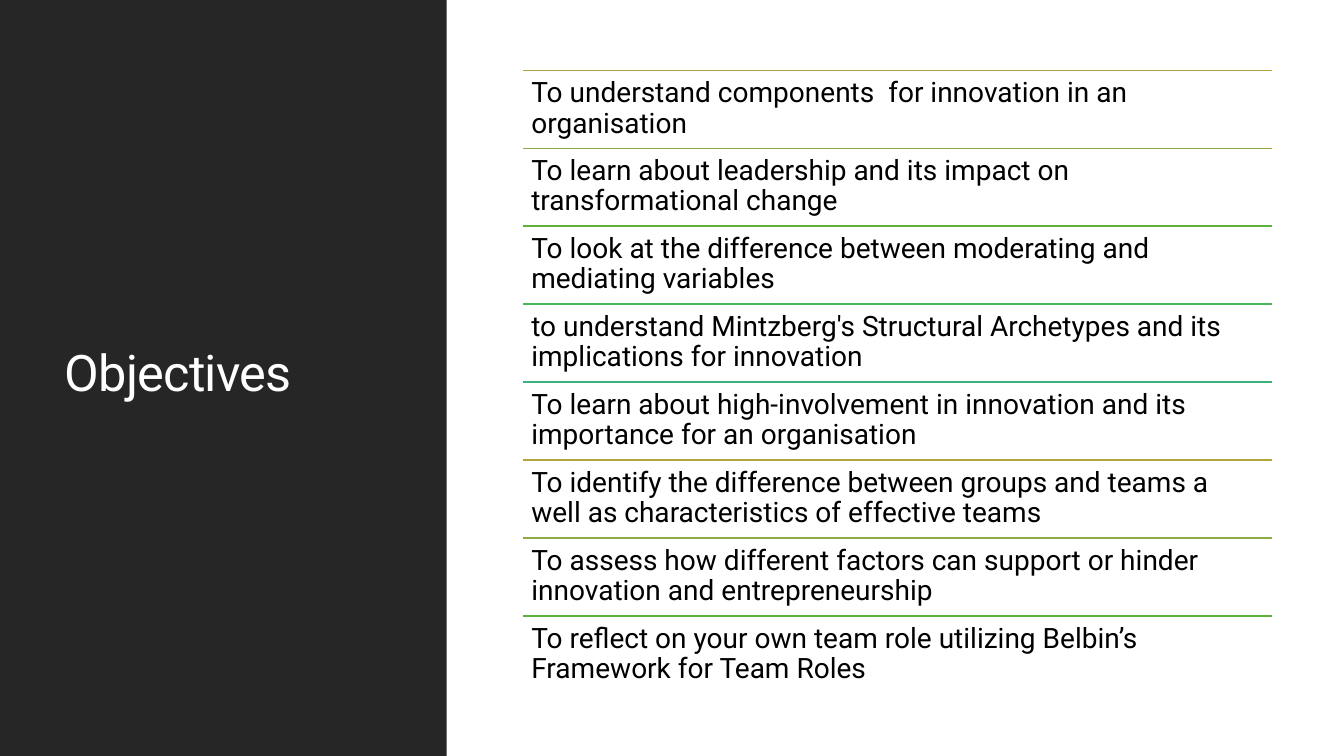
"""Build the Objectives slide: a dark title panel beside eight ruled statements."""
from itertools import cycle

from lxml.etree import SubElement
from pptx import Presentation
from pptx.dml.color import RGBColor
from pptx.enum.shapes import MSO_CONNECTOR, MSO_SHAPE
from pptx.enum.text import MSO_ANCHOR, PP_ALIGN
from pptx.oxml.ns import qn
from pptx.util import Inches, Pt


def color(value):
    return RGBColor.from_string(value)


def format_text(shape, size, text_color, anchor):
    frame = shape.text_frame
    frame.word_wrap = True
    frame.vertical_anchor = anchor
    para = frame.paragraphs[0]
    para.alignment = PP_ALIGN.LEFT
    para.line_spacing = 0.9
    span = para.runs[0]
    span.font.name = "Roboto"
    span.font.size = Pt(size)
    span.font.color.rgb = color(text_color)
    return span


OBJECTIVES = [
    "To understand components  for innovation in an organisation",
    "To learn about leadership and its impact on transformational change",
    "To look at the difference between moderating and mediating variables",
    "to understand Mintzberg's Structural Archetypes and its implications for innovation",
    "To learn about high-involvement in innovation and its importance for an organisation",
    "To identify the difference between groups and teams a well as characteristics of effective teams",
    "To assess how different factors can support or hinder innovation and entrepreneurship",
    "To reflect on your own team role utilizing Belbin’s Framework for Team Roles",
]
RULE_COLORS = ["B1A43B", "8CAC43", "5CB13B", "48B757", "3BB17C"]
LEFT, RIGHT = 5.19, 12.62
FIRST_TOP, LAST_TOP = 0.7, 6.11
ROW_HEIGHT = (LAST_TOP - FIRST_TOP) / (len(OBJECTIVES) - 1)

deck = Presentation()
deck.slide_width = Inches(13.33)
deck.slide_height = Inches(7.5)
page = deck.slides.add_slide(deck.slide_layouts[5])
page.background.fill.solid()
page.background.fill.fore_color.rgb = color("FFFFFF")

panel = page.shapes.add_shape(
    MSO_SHAPE.RECTANGLE, Inches(0), Inches(0), Inches(4.43), Inches(7.5))
panel.shadow.inherit = False
panel.fill.solid()
panel.fill.fore_color.rgb = color("262626")
panel.line.fill.background()

title = page.shapes.title
title.element.addprevious(panel.element)
title.left, title.top = Inches(0.54), Inches(0.57)
title.width, title.height = Inches(3.37), Inches(6.31)
title.text_frame.text = "Objectives"
heading = format_text(title, 36, "FFFFFF", MSO_ANCHOR.MIDDLE)
heading.font.element.set("spc", "-50") if hasattr(heading.font, "element") else heading._r.get_or_add_rPr().set("spc", "-50")

for row, (objective, rule_color) in enumerate(zip(OBJECTIVES, cycle(RULE_COLORS))):
    top = Inches(FIRST_TOP + row * ROW_HEIGHT)
    rule = page.shapes.add_connector(
        MSO_CONNECTOR.STRAIGHT, Inches(LEFT), top, Inches(RIGHT), top)
    rule.line.color.rgb = color(rule_color)
    rule.line.width = Pt(1.25)
    SubElement(rule.element.spPr, qn("a:effectLst"))

    box = page.shapes.add_textbox(
        Inches(LEFT), top, Inches(RIGHT - LEFT), Inches(ROW_HEIGHT))
    frame = box.text_frame
    frame.margin_left = frame.margin_right = Inches(0.08)
    frame.margin_top = frame.margin_bottom = Inches(0.08)
    frame.text = objective
    format_text(box, 20, "000000", MSO_ANCHOR.TOP)

deck.save("out.pptx")
